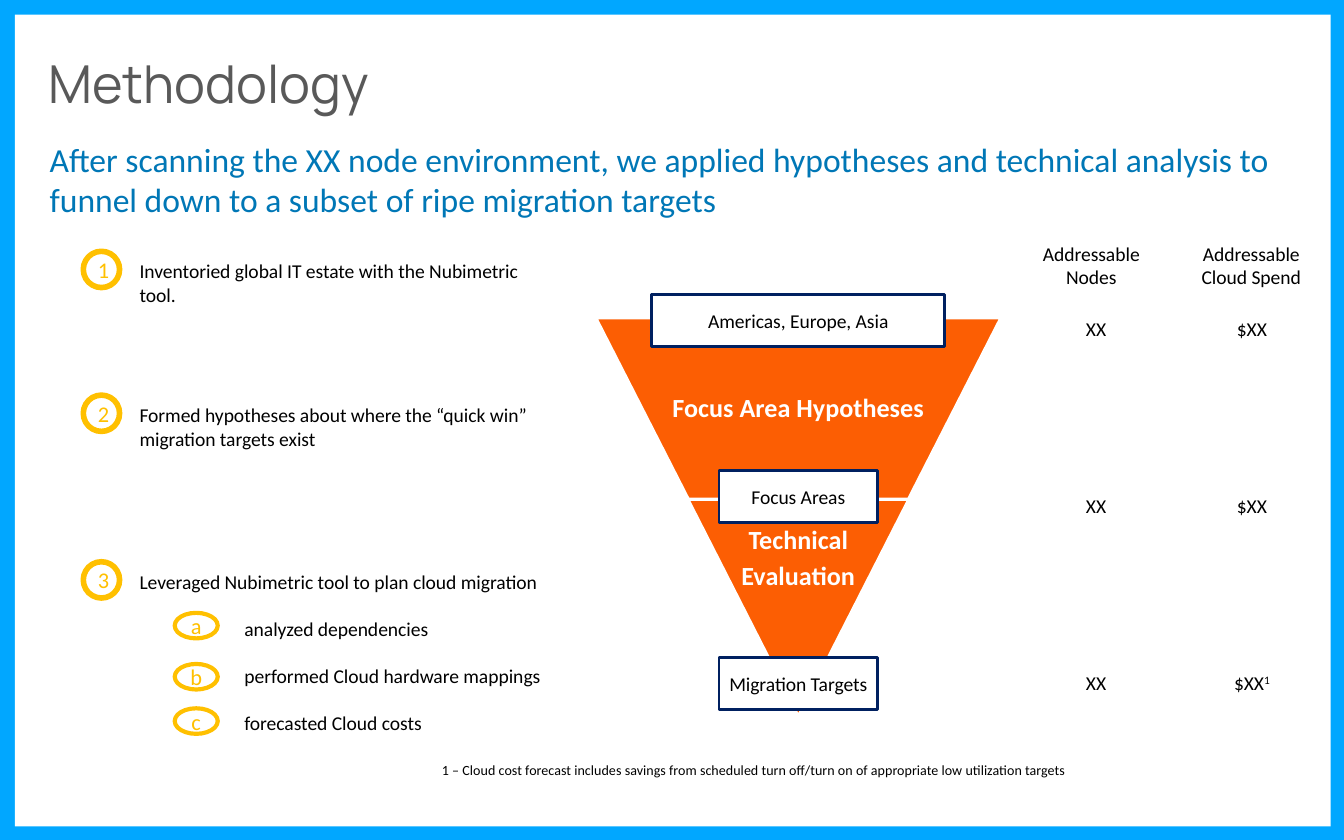
"""Build the Methodology slide: three steps, a funnel and its addressable results."""
from lxml import etree
from pptx import Presentation
from pptx.dml.color import RGBColor
from pptx.enum.shapes import MSO_SHAPE
from pptx.enum.text import MSO_ANCHOR, PP_ALIGN
from pptx.oxml.ns import qn
from pptx.util import Inches, Pt

RECTANGLE, ELLIPSE, TRAPEZOID = MSO_SHAPE.RECTANGLE, MSO_SHAPE.OVAL, MSO_SHAPE.TRAPEZOID
LEFT, CENTER = PP_ALIGN.LEFT, PP_ALIGN.CENTER
TOP, MIDDLE = MSO_ANCHOR.TOP, MSO_ANCHOR.MIDDLE

THEME = {
    "font": "Calibri", "title_font": "Manrope",
    "frame": "01A7FF", "white": "FFFFFF", "black": "000000", "gray": "595959",
    "blue": "0077B6", "orange": "FC5E03", "navy": "002060", "gold": "FFC000",
    "title": 28, "subtitle": 18, "funnel": 14, "badge": 12, "body": 10.5, "note": 7.5,
}

TITLE = "Methodology"
SUBTITLE = ("After scanning the XX node environment, we applied hypotheses and technical "
            "analysis to funnel down to a subset of ripe migration targets")
STEPS = [
    (1.87, 3.25, "Inventoried global IT estate with the Nubimetric tool."),
    (2.94, 3.56, "Formed hypotheses about where the “quick win” migration targets exist"),
    (4.18, 4.12, "Leveraged Nubimetric tool to plan cloud migration"),
]
SUBSTEPS = [
    ("a", 4.56, "analyzed dependencies"),
    ("b", 4.94, "performed Cloud hardware mappings"),
    ("c", 5.27, "forecasted Cloud costs"),
]
FUNNEL_CENTER = 5.94
FUNNEL_PARTS = [(2.37, 3, 1.34), (3.72, 1.63, 1.6)]
FUNNEL_LABELS = [
    (2.74, 1.95, ["Focus Area Hypotheses"]),
    (3.86, 1.63, ["Technical", "Evaluation"]),
]
FUNNEL_BOXES = [
    (4.89, 1.18, "Migration Targets"),
    (2.19, 2.18, "Americas, Europe, Asia"),
    (3.5, 1.18, "Focus Areas"),
]
RESULTS = [
    (7.56, 7.81, "Addressable Nodes", ["XX", "XX", "XX"]),
    (8.75, 8.97, "Addressable Cloud Spend", ["$XX", "$XX", "$XX"]),
]
RESULT_TOP, RESULT_STEP = 2.31, 1.315
FOOTNOTE_MARK = "1"
FOOTNOTE = ("1 – Cloud cost forecast includes savings from scheduled turn off/turn on of "
            "appropriate low utilization targets")


def color(name):
    return RGBColor.from_string(THEME[name])


def write(shape, lines, size="body", ink="black", align=LEFT, anchor=TOP,
          insets=(0.1, 0.05), font="font", bold=False, line_spacing=None):
    frame = shape.text_frame
    frame.text = "\n".join(lines)
    frame.word_wrap = True
    frame.vertical_anchor = anchor
    frame.margin_left = frame.margin_right = Inches(insets[0])
    frame.margin_top = frame.margin_bottom = Inches(insets[1])
    for paragraph in frame.paragraphs:
        paragraph.alignment = align
        paragraph.line_spacing = line_spacing
        for run in paragraph.runs:
            run.font.name = THEME[font]
            run.font.size = Pt(THEME[size])
            run.font.bold = bold
            run.font.color.rgb = color(ink)
    return frame


def add_text(slide, box, lines, **style):
    shape = slide.shapes.add_textbox(*map(Inches, box))
    return write(shape, lines, **style)


def add_shape(slide, kind, box, fill=None, line=None, width=1):
    shape = slide.shapes.add_shape(kind, *map(Inches, box))
    shape.shadow.inherit = False
    if fill:
        shape.fill.solid()
        shape.fill.fore_color.rgb = color(fill)
    else:
        shape.fill.background()
    if line:
        shape.line.color.rgb = color(line)
        shape.line.width = Pt(width)
    else:
        shape.line.fill.background()
    return shape


def add_badge(slide, box, label, width):
    badge = add_shape(slide, ELLIPSE, box, line="gold", width=width)
    write(badge, [label], size="badge", ink="gold", align=CENTER, anchor=MIDDLE,
          insets=(0.07, 0.07))


def add_heading(slide):
    panel = add_shape(slide, RECTANGLE, (0.11, 0.11, 9.79, 6.04), fill="white")
    slide.shapes.element.insert(2, panel.element)
    title = slide.shapes.title
    title.left, title.top, title.width, title.height = map(Inches, (0.29, 0.39, 9.38, 0.75))
    write(title, [TITLE], size="title", ink="gray", font="title_font",
          insets=(0.07, 0.04), line_spacing=0.9)
    add_text(slide, (0.3, 0.99, 9.57, 0.68), [SUBTITLE], size="subtitle", ink="blue",
             insets=(0.07, 0.04))


def add_funnel(slide):
    for top, width, height in FUNNEL_PARTS:
        box = (FUNNEL_CENTER - width / 2, top, width, height)
        part = add_shape(slide, TRAPEZOID, box, fill="orange", line="white")
        part.adjustments[0] = 0.51
        part.rotation = 180
    for top, width, lines in FUNNEL_LABELS:
        frame = add_text(slide, (FUNNEL_CENTER - width / 2, top, width, 0.6), lines,
                         size="funnel", ink="white", bold=True, align=CENTER,
                         anchor=MIDDLE, insets=(0.02, 0.02), line_spacing=0.9)
        for paragraph in frame.paragraphs[1:]:
            paragraph.space_before = Pt(4.5)
    for top, width, label in FUNNEL_BOXES:
        box = add_shape(slide, RECTANGLE, (FUNNEL_CENTER - width / 2, top, width, 0.39),
                        fill="white", line="navy", width=1.5)
        write(box, [label], align=CENTER, anchor=MIDDLE, insets=(0.07, 0.07))


def add_steps(slide):
    for number, (top, width, text) in enumerate(STEPS, 1):
        is_last = number == len(STEPS)
        lines = [text] + [substep[2] for substep in SUBSTEPS if is_last]
        frame = add_text(slide, (0.94, top + 0.01, width, 1.34 if is_last else 0.45), lines)
        for paragraph in frame.paragraphs[1:]:
            paragraph.space_before = Pt(12.6)
            paragraph._p.get_or_add_pPr().set("marL", str(Inches(0.78)))
        add_badge(slide, (0.62, top, 0.27, 0.27), str(number), 3)
    for letter, top, _ in SUBSTEPS:
        add_badge(slide, (1.3, top, 0.32, 0.19), letter, 2.25)


def add_results(slide):
    for heading_left, value_left, heading, values in RESULTS:
        add_text(slide, (heading_left, 1.75, 1.12, 0.45), [heading], align=CENTER)
        for row, value in enumerate(values):
            frame = add_text(slide, (value_left, RESULT_TOP + row * RESULT_STEP, 0.69, 0.28),
                             [value], align=CENTER)
    mark = frame.paragraphs[0].add_run()
    mark.text = FOOTNOTE_MARK
    mark.font.name = THEME["font"]
    mark.font.size = Pt(THEME["body"])
    mark.font.color.rgb = color("black")
    mark.font._element.set("baseline", "30000")
    add_text(slide, (3.19, 5.62, 5.56, 0.23), [FOOTNOTE], size="note")


def main():
    presentation = Presentation()
    presentation.slide_width, presentation.slide_height = Inches(10), Inches(6.25)
    slide = presentation.slides.add_slide(presentation.slide_layouts[5])
    slide.background.fill.solid()
    slide.background.fill.fore_color.rgb = color("frame")
    add_heading(slide)
    add_funnel(slide)
    add_steps(slide)
    add_results(slide)
    for body in slide.shapes.title.element.iter(qn("a:bodyPr")):
        for fit in list(body):
            body.remove(fit)
        etree.SubElement(body, qn("a:noAutofit"))
    presentation.save("out.pptx")


if __name__ == "__main__":
    main()
